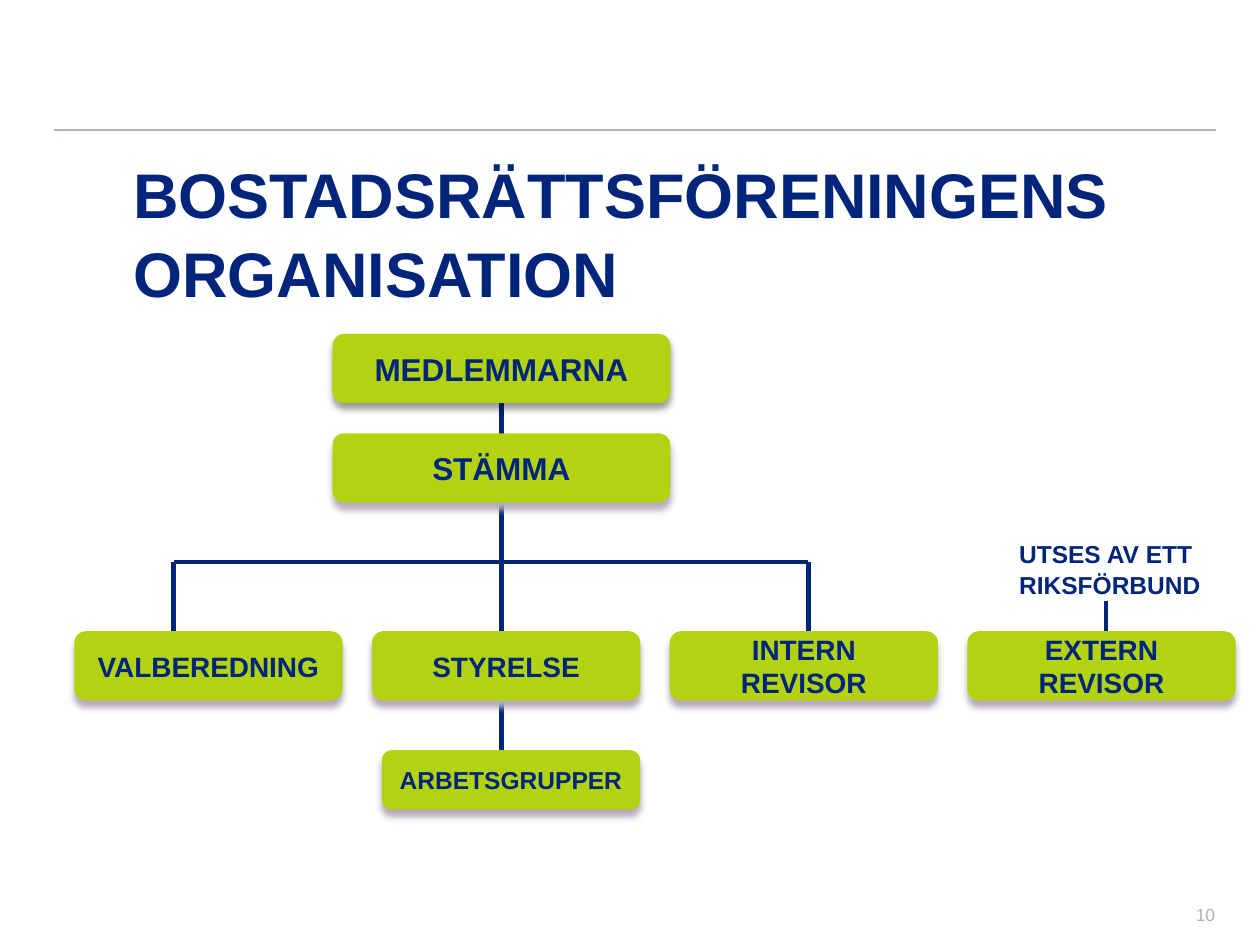
from lxml import etree
from pptx import Presentation
from pptx.dml.color import RGBColor
from pptx.enum.shapes import MSO_CONNECTOR, MSO_SHAPE
from pptx.enum.text import MSO_ANCHOR, MSO_AUTO_SIZE, PP_ALIGN
from pptx.oxml.ns import qn
from pptx.util import Pt

STRAIGHT = MSO_CONNECTOR.STRAIGHT
ROUNDED = MSO_SHAPE.ROUNDED_RECTANGLE
TOP, MIDDLE = MSO_ANCHOR.TOP, MSO_ANCHOR.MIDDLE
LEFT, CENTER, RIGHT = PP_ALIGN.LEFT, PP_ALIGN.CENTER, PP_ALIGN.RIGHT

NAVY = RGBColor(0x00, 0x25, 0x7A)
LIME = RGBColor(0xB3, 0xD3, 0x12)
GREY = RGBColor(0xB5, 0xAC, 0xBD)
BLACK = RGBColor(0, 0, 0)
FONT = "Arial"

# Content
TITLE = "BOSTADSRÄTTSFÖRENINGENS ORGANISATION"
APPOINTED_BY = "UTSES AV ETT RIKSFÖRBUND"
PAGE_NUMBER = "10"
UPPER_BODIES = ["MEDLEMMARNA", "STÄMMA"]
ELECTED_BODIES = ["VALBEREDNING", "STYRELSE", "INTERN REVISOR", "EXTERN REVISOR"]
WORK_GROUPS = "ARBETSGRUPPER"

# Layout, in points
BOX_HEIGHT = 39.6
UPPER_LEFT, UPPER_TOP, UPPER_WIDTH, UPPER_STEP = 190, 190.8, 193, 56.8
ROW_LEFT, ROW_TOP, ROW_WIDTH, ROW_STEP = 42.5, 360.7, 153.3, 170.1
TRUNK_X = UPPER_LEFT + UPPER_WIDTH / 2
BRANCH_Y = 321.2
BRANCH_LEFT, BRANCH_RIGHT = 99.2, 462
EXTERNAL_X = 632
BEHIND_ROW = 383  # line ends hidden behind the row of boxes
CONNECTORS = [
    (BRANCH_RIGHT, BRANCH_Y, BRANCH_RIGHT, BEHIND_ROW),
    (BRANCH_LEFT, BRANCH_Y, BRANCH_LEFT, BEHIND_ROW),
    (EXTERNAL_X, 343.5, EXTERNAL_X, 394.5),
    (TRUNK_X, BEHIND_ROW, TRUNK_X, 463),
    (TRUNK_X, 213, TRUNK_X, 372),
    (BRANCH_LEFT, BRANCH_Y, BRANCH_RIGHT, BRANCH_Y),
]


def place(shape, left, top, width, height):
    shape.left, shape.top = Pt(left), Pt(top)
    shape.width, shape.height = Pt(width), Pt(height)


def write(shape, text, size, color=NAVY, bold=True, align=LEFT, anchor=TOP, spacing=None):
    frame = shape.text_frame
    frame.word_wrap = True
    frame.auto_size = MSO_AUTO_SIZE.NONE
    frame.vertical_anchor = anchor
    frame.text = text
    paragraph = frame.paragraphs[0]
    paragraph.alignment = align
    paragraph.line_spacing = spacing
    paragraph.font.name = FONT
    paragraph.font.size = Pt(size)
    paragraph.font.bold = bold
    paragraph.font.color.rgb = color


def add_line(slide, x1, y1, x2, y2, color=NAVY, width=2.5):
    line = slide.shapes.add_connector(STRAIGHT, Pt(x1), Pt(y1), Pt(x2), Pt(y2))
    line.line.color.rgb = color
    line.line.width = Pt(width)
    etree.SubElement(line._element.spPr, qn("a:effectLst"))


def add_shadow(shape, color, opacity, distance):
    shape.shadow.inherit = False
    effects = shape._element.spPr.find(qn("a:effectLst"))
    shadow = etree.SubElement(effects, qn("a:outerShdw"), blurRad=str(Pt(4)),
                              dist=str(Pt(distance)), dir="5400000", rotWithShape="0")
    shade = etree.SubElement(shadow, qn("a:srgbClr"), val=str(color))
    etree.SubElement(shade, qn("a:alpha"), val=str(opacity * 1000))


def add_box(slide, text, left, top, width, size, height=BOX_HEIGHT, shadow=(GREY, 100, 4)):
    box = slide.shapes.add_shape(ROUNDED, Pt(left), Pt(top), Pt(width), Pt(height))
    box.fill.solid()
    box.fill.fore_color.rgb = LIME
    box.line.fill.background()
    add_shadow(box, *shadow)
    write(box, text, size, align=CENTER, anchor=MIDDLE)


def add_text(slide, text, left, top, width, height, size, **style):
    box = slide.shapes.add_textbox(Pt(left), Pt(top), Pt(width), Pt(height))
    write(box, text, size, **style)


def main():
    presentation = Presentation()
    presentation.slide_width, presentation.slide_height = Pt(720), Pt(540)
    slide = presentation.slides.add_slide(presentation.slide_layouts[5])

    # Title, rule and page number
    title = slide.shapes.title
    place(title, 69, 83, 631, 90)
    write(title, TITLE, 36, spacing=1.05)
    add_line(slide, 31, 74.2, 694.8, 74.2, GREY, 1.5)
    add_text(slide, PAGE_NUMBER, 588.5, 515.5, 113, 14.4, 10,
             color=GREY, bold=False, align=RIGHT, anchor=MIDDLE)

    # Lines lie behind the boxes
    for ends in CONNECTORS:
        add_line(slide, *ends)

    # Organisation boxes
    shadows = [(BLACK, 40, 3), (GREY, 100, 4)]
    for index, (text, shadow) in enumerate(zip(UPPER_BODIES, shadows)):
        add_box(slide, text, UPPER_LEFT, UPPER_TOP + index * UPPER_STEP,
                UPPER_WIDTH, 18, shadow=shadow)
    for index, text in enumerate(ELECTED_BODIES):
        add_box(slide, text, ROW_LEFT + index * ROW_STEP, ROW_TOP, ROW_WIDTH, 16)
    add_box(slide, WORK_GROUPS, 218.2, 428.7, 147.6, 14, height=34)

    # Note above the external auditor
    add_text(slide, APPOINTED_BY, 575.3, 303.8, 119, 41, 14, spacing=1.05)

    presentation.save("out.pptx")


if __name__ == "__main__":
    main()
